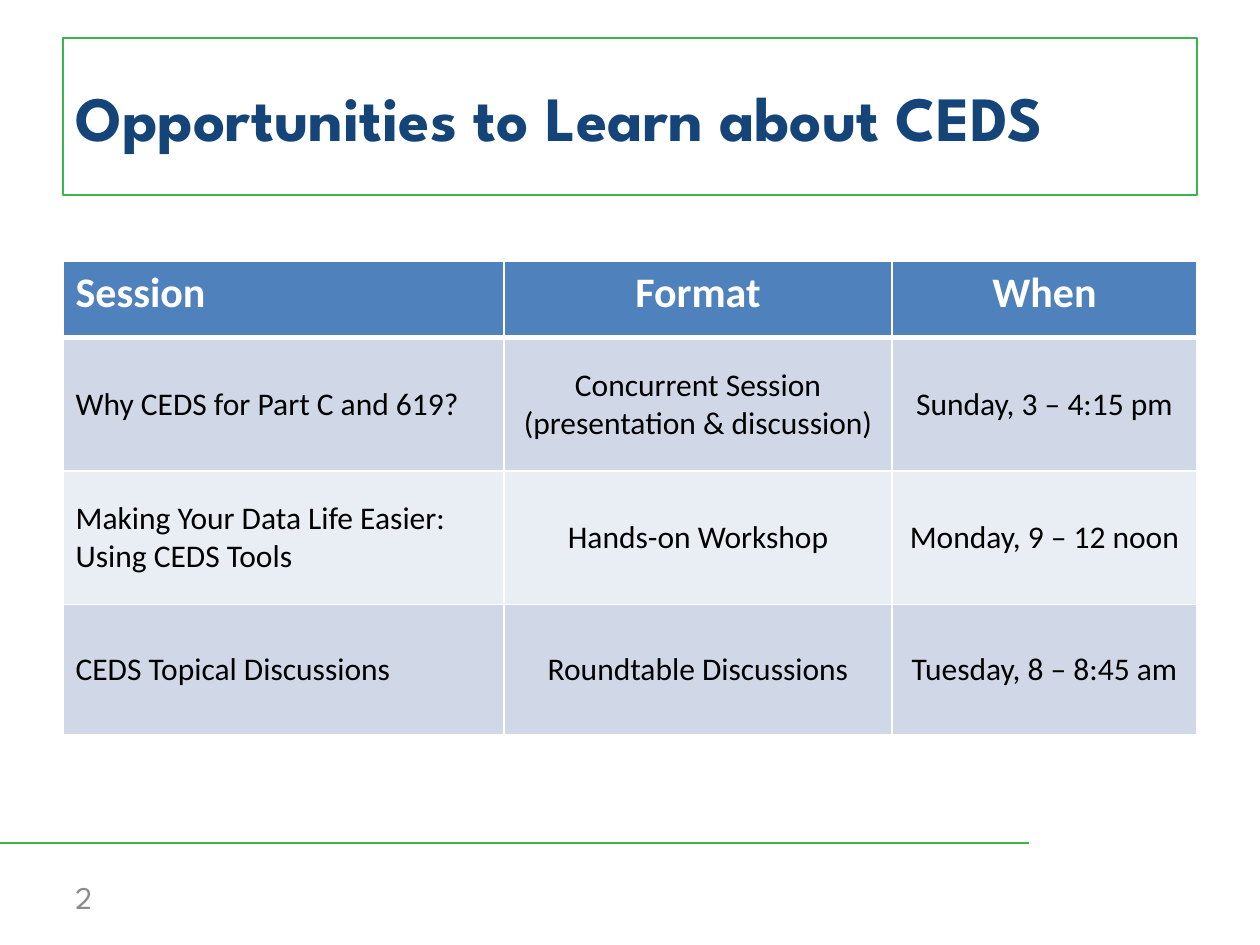
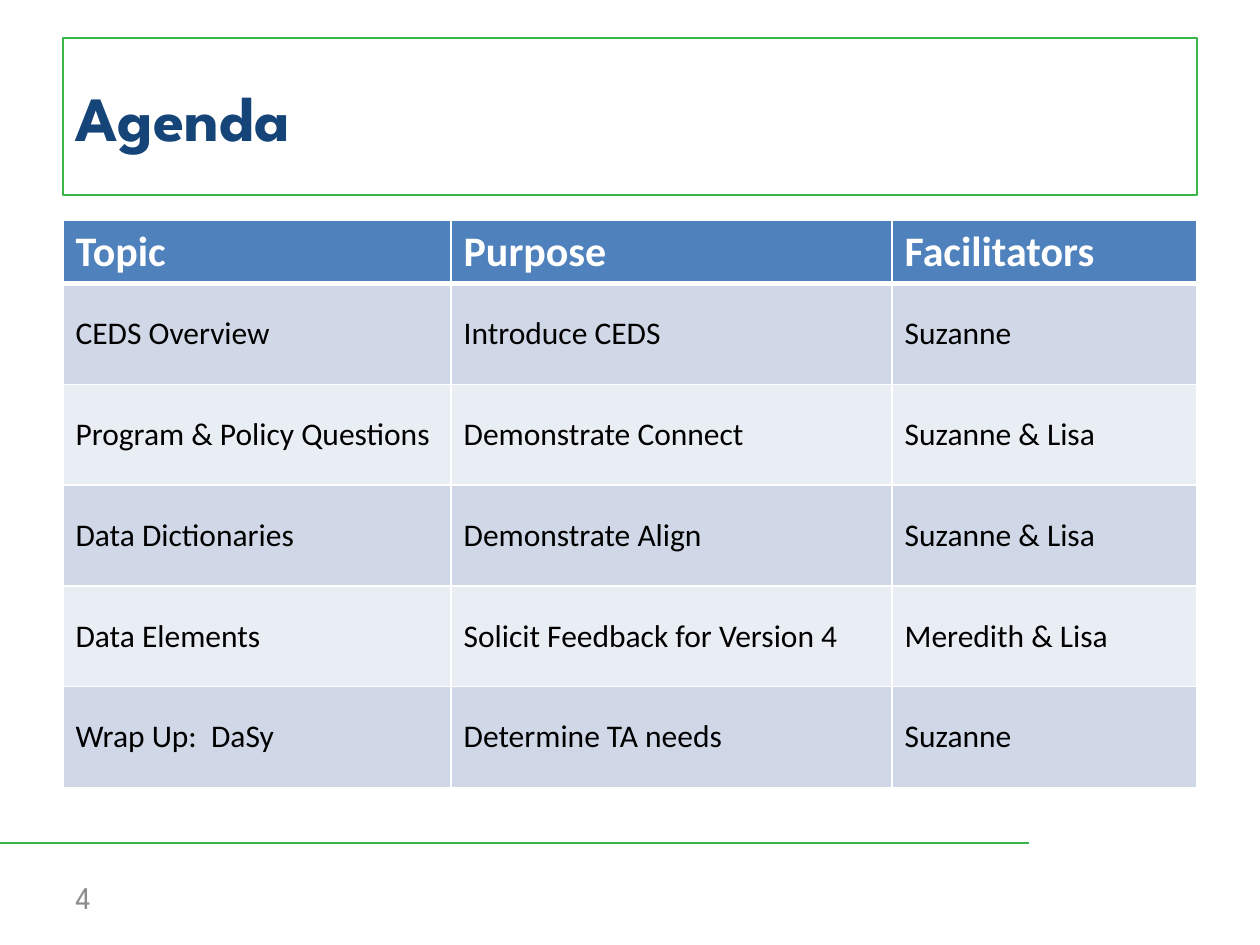
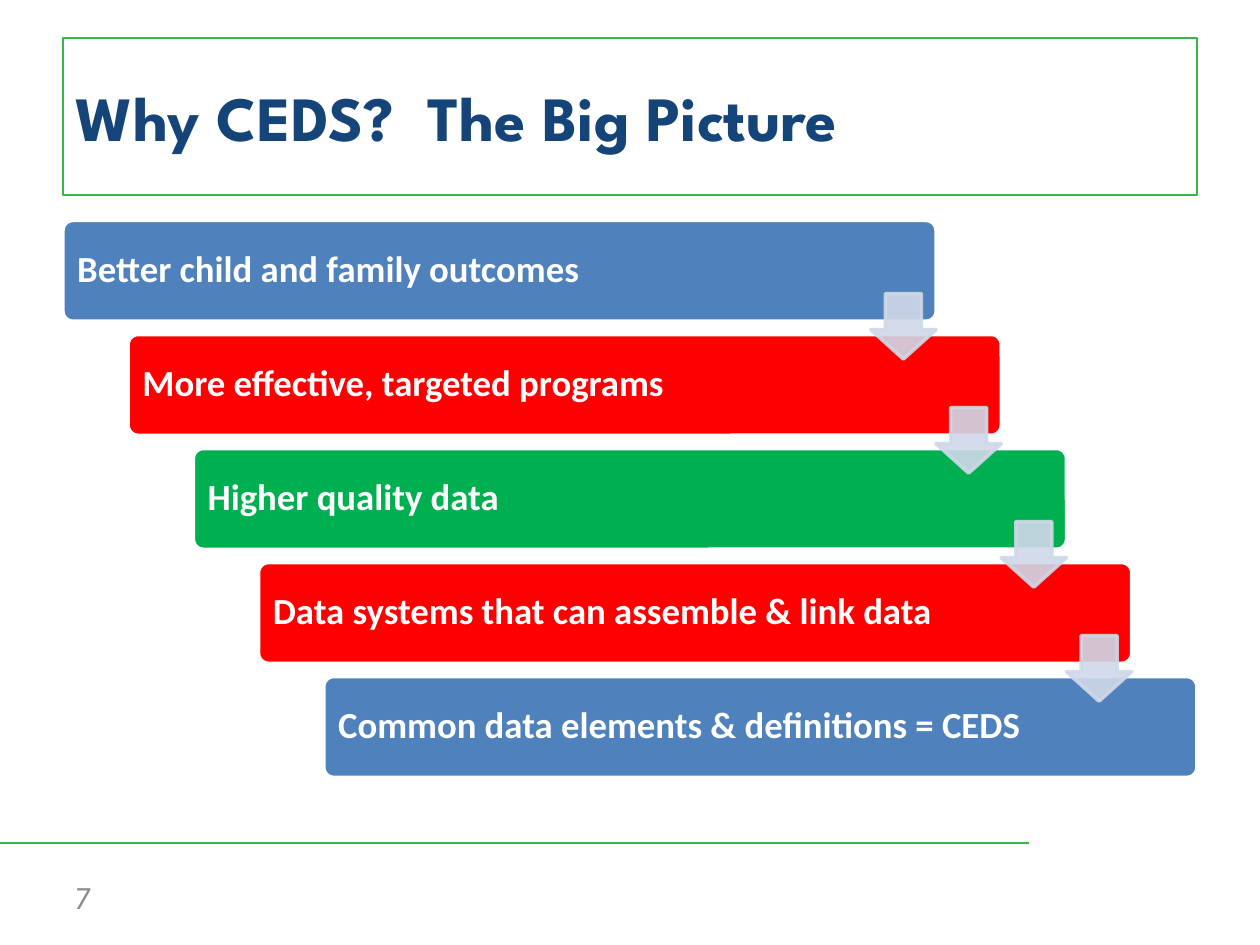
"""Build three slides about learning opportunities, the agenda and the purpose of CEDS."""
from dataclasses import dataclass

from lxml.etree import SubElement
from pptx import Presentation
from pptx.dml.color import RGBColor
from pptx.enum.shapes import MSO_CONNECTOR, MSO_SHAPE
from pptx.enum.text import MSO_ANCHOR, MSO_AUTO_SIZE, PP_ALIGN
from pptx.oxml import parse_xml
from pptx.oxml.ns import nsdecls, qn
from pptx.util import Inches, Pt

COLORS = {
    "navy": "154578",
    "green_line": "39B54A",
    "gray": "8C8C8C",
    "blue": "4F81BD",
    "red": "FF0000",
    "green": "00B050",
    "band_dark": "D0D8E8",
    "band_light": "E9EDF4",
    "white": "FFFFFF",
    "black": "000000",
}
TITLE_FONT = "League Spartan"
BODY_FONT = "Calibri"
LEFT, CONTENT_WIDTH = 0.5, 9.0

BAR_WIDTH, BAR_HEIGHT = 6.93, 0.8
FIRST_BAR_TOP, LAST_BAR_TOP = 1.75, 5.37
ARROW_SIZE, ARROW_DROP = 0.52, 0.58


@dataclass(frozen=True)
class TableSpec:
    top: float
    column_widths: tuple[float, ...]
    row_heights: tuple[float, ...]
    alignments: tuple[PP_ALIGN, ...]
    rows: tuple[tuple[str, ...], ...]


@dataclass(frozen=True)
class Bar:
    text: str
    color: str


SESSIONS = TableSpec(
    2.07,
    (3.5, 3.08, 2.42),
    (0.61, 1.06, 1.06, 1.03),
    (PP_ALIGN.LEFT, PP_ALIGN.CENTER, PP_ALIGN.CENTER),
    (
        ("Session", "Format", "When"),
        ("Why CEDS for Part C and 619?", "Concurrent Session (presentation & discussion)",
         "Sunday, 3 – 4:15 pm"),
        ("Making Your Data Life Easier: Using CEDS Tools", "Hands-on Workshop",
         "Monday, 9 – 12 noon"),
        ("CEDS Topical Discussions", "Roundtable Discussions", "Tuesday, 8 – 8:45 am"),
    ),
)
AGENDA = TableSpec(
    1.75,
    (3.08, 3.5, 2.42),
    (0.5,) + (0.8,) * 5,
    (PP_ALIGN.LEFT,) * 3,
    (
        ("Topic", "Purpose", "Facilitators"),
        ("CEDS Overview", "Introduce CEDS", "Suzanne"),
        ("Program & Policy Questions", "Demonstrate Connect", "Suzanne & Lisa"),
        ("Data Dictionaries", "Demonstrate Align", "Suzanne & Lisa"),
        ("Data Elements", "Solicit Feedback for Version 4", "Meredith & Lisa"),
        ("Wrap Up:  DaSy", "Determine TA needs", "Suzanne"),
    ),
)
BARS = (
    Bar("Better child and family outcomes", "blue"),
    Bar("More effective, targeted programs", "red"),
    Bar("Higher quality data", "green"),
    Bar("Data systems that can assemble & link data", "red"),
    Bar("Common data elements & definitions = CEDS", "blue"),
)


def rgb(name: str) -> RGBColor:
    return RGBColor.from_string(COLORS[name])


def write(text_frame, text: str, font_name: str, size: float, color: str,
          bold: bool = False, alignment: PP_ALIGN = PP_ALIGN.LEFT) -> None:
    text_frame.text = text
    text_frame.word_wrap = True
    paragraph = text_frame.paragraphs[0]
    paragraph.alignment = alignment
    font = paragraph.runs[0].font
    font.name, font.size, font.bold = font_name, Pt(size), bold
    font.color.rgb = rgb(color)


def set_line(line, color: str, width: float) -> None:
    line.color.rgb = rgb(color)
    line.width = Pt(width)


def add_base_slide(presentation, title_text: str, number: int):
    slide = presentation.slides.add_slide(presentation.slide_layouts[5])

    footer_line = slide.shapes.add_connector(
        MSO_CONNECTOR.STRAIGHT, Inches(0), Inches(6.69), Inches(8.17), Inches(6.69))
    set_line(footer_line.line, "green_line", 1.5)
    SubElement(footer_line._element.spPr, qn("a:effectLst"))

    title = slide.shapes.title
    title.left, title.top = Inches(LEFT), Inches(0.3)
    title.width, title.height = Inches(CONTENT_WIDTH), Inches(1.25)
    set_line(title.line, "green_line", 1)
    title.text_frame.auto_size = MSO_AUTO_SIZE.NONE
    title.text_frame.vertical_anchor = MSO_ANCHOR.MIDDLE
    write(title.text_frame, title_text, TITLE_FONT, 36, "navy", bold=True)

    number_box = slide.shapes.add_textbox(Inches(LEFT), Inches(6.92), Inches(2.33), Inches(0.4))
    number_box.text_frame.vertical_anchor = MSO_ANCHOR.MIDDLE
    write(number_box.text_frame, str(number), TITLE_FONT, 18, "gray")
    return slide


def set_borders(cell, top: float, bottom: float) -> None:
    properties = cell._tc.get_or_add_tcPr()
    for side, width in (("L", 1), ("R", 1), ("T", top), ("B", bottom)):
        properties.append(parse_xml(
            f'<a:ln{side} {nsdecls("a")} w="{Pt(width)}"><a:solidFill>'
            f'<a:srgbClr val="{COLORS["white"]}"/></a:solidFill></a:ln{side}>'))


def add_grid(slide, spec: TableSpec) -> None:
    table = slide.shapes.add_table(
        len(spec.rows), len(spec.column_widths), Inches(LEFT), Inches(spec.top),
        Inches(CONTENT_WIDTH), Inches(sum(spec.row_heights))).table
    for column, width in zip(table.columns, spec.column_widths):
        column.width = Inches(width)
    for row_index, (row, height) in enumerate(zip(table.rows, spec.row_heights)):
        row.height = Inches(height)
        is_header = row_index == 0
        band = "band_dark" if row_index % 2 else "band_light"
        for cell, text, alignment in zip(row.cells, spec.rows[row_index], spec.alignments):
            set_borders(cell, top=3 if row_index == 1 else 1, bottom=3 if is_header else 1)
            cell.fill.solid()
            cell.fill.fore_color.rgb = rgb("blue" if is_header else band)
            cell.vertical_anchor = MSO_ANCHOR.TOP if is_header else MSO_ANCHOR.MIDDLE
            write(cell.text_frame, text, BODY_FONT, 24 if is_header else 18,
                  "white" if is_header else "black", is_header, alignment)


def add_filled_shape(slide, kind: MSO_SHAPE, left: float, top: float, width: float,
                     height: float, fill: str, line: str, adjustments: tuple[float, ...]):
    shape = slide.shapes.add_shape(kind, Inches(left), Inches(top), Inches(width), Inches(height))
    shape.shadow.inherit = False
    shape.fill.solid()
    shape.fill.fore_color.rgb = rgb(fill)
    set_line(shape.line, line, 2)
    for index, value in enumerate(adjustments):
        shape.adjustments[index] = value
    return shape


def add_bar(slide, bar: Bar, left: float, top: float) -> None:
    shape = add_filled_shape(slide, MSO_SHAPE.ROUNDED_RECTANGLE, left, top,
                             BAR_WIDTH, BAR_HEIGHT, bar.color, "white", (0.1,))
    frame = shape.text_frame
    frame.margin_left = frame.margin_right = Inches(0.09)
    frame.vertical_anchor = MSO_ANCHOR.MIDDLE
    write(frame, bar.text, BODY_FONT, 21, "white", bold=True)
    frame.paragraphs[0].line_spacing = 0.9


def add_step_arrow(slide, left: float, top: float) -> None:
    arrow = add_filled_shape(slide, MSO_SHAPE.DOWN_ARROW, left, top, ARROW_SIZE, ARROW_SIZE,
                             "band_dark", "band_dark", (0.55, 0.45))
    for color in arrow._element.spPr.iter(qn("a:srgbClr")):
        SubElement(color, qn("a:alpha")).set("val", "90000")


def add_staircase(slide, bars: tuple[Bar, ...]) -> None:
    steps = len(bars) - 1
    step_x = (CONTENT_WIDTH - BAR_WIDTH) / steps
    step_y = (LAST_BAR_TOP - FIRST_BAR_TOP) / steps
    corners = [(LEFT + i * step_x, FIRST_BAR_TOP + i * step_y) for i in range(len(bars))]
    for bar, (left, top) in zip(bars, corners):
        add_bar(slide, bar, left, top)
    for left, top in corners[:-1]:
        add_step_arrow(slide, left + BAR_WIDTH - ARROW_SIZE, top + ARROW_DROP)


def main() -> None:
    presentation = Presentation()
    presentation.slide_width, presentation.slide_height = Inches(10), Inches(7.5)
    add_grid(add_base_slide(presentation, "Opportunities to Learn about CEDS", 2), SESSIONS)
    add_grid(add_base_slide(presentation, "Agenda", 4), AGENDA)
    add_staircase(add_base_slide(presentation, "Why CEDS?  The Big Picture", 7), BARS)
    presentation.save("out.pptx")


if __name__ == "__main__":
    main()
